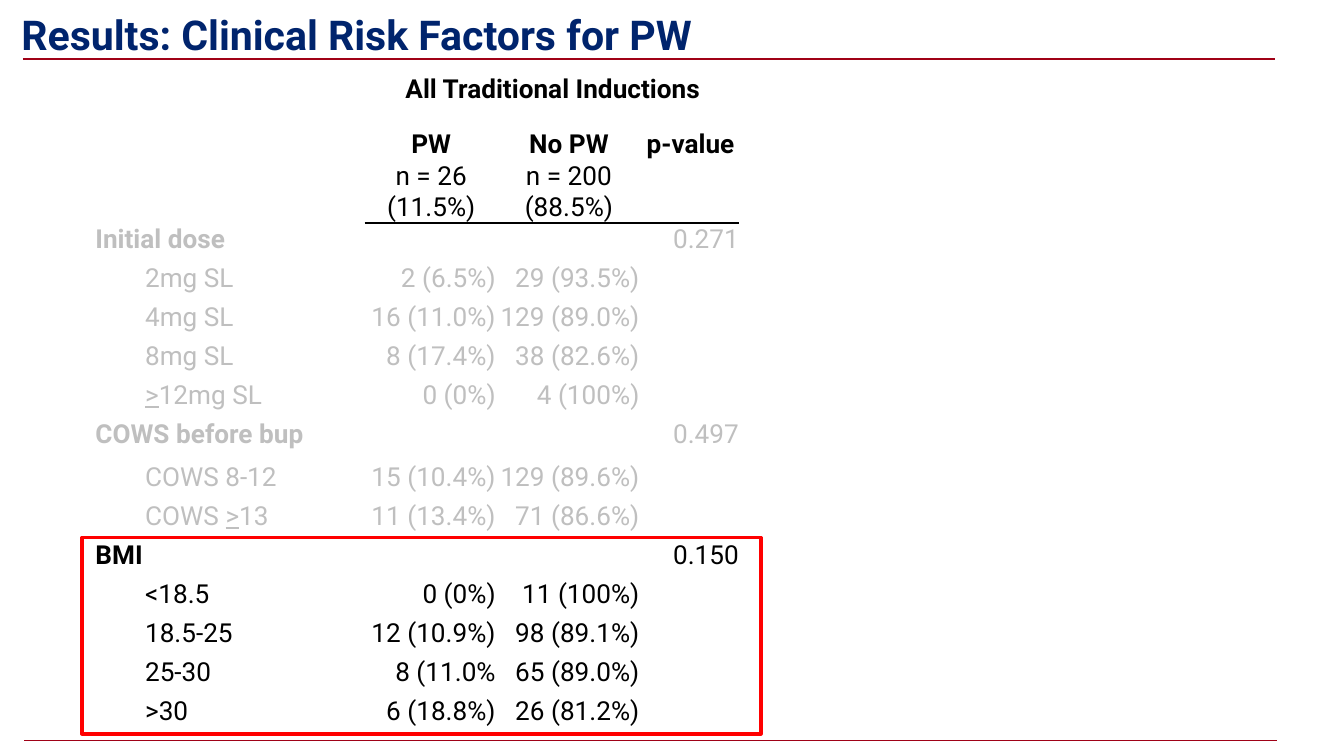
from lxml.etree import SubElement
from pptx import Presentation
from pptx.dml.color import RGBColor
from pptx.enum.shapes import MSO_CONNECTOR, MSO_SHAPE
from pptx.enum.text import MSO_ANCHOR, MSO_AUTO_SIZE, PP_ALIGN
from pptx.oxml.ns import qn
from pptx.util import Inches, Pt

FONT = "Roboto"
BLACK, WHITE, GREY = "000000", "FFFFFF", "BFBFBF"
NAVY, CRIMSON, RED = "00246D", "A00117", "FF0000"

COLUMN_WIDTHS = [0.37, 1.59, 0.05, 0.98, 1.07, 0.74, 0.08, 0.94, 1.07, 0.86]
ROW_HEIGHTS = [0.4, 0.29, 0.47] + [0.29] * 5 + [0.32] + [0.29] * 7
HEADER_ROWS = 3
RULED_COLUMNS = range(3, 6)

FACTORS = [
    ("Initial dose", "0.271", GREY, [
        ("2mg SL", "2 (6.5%)", "29 (93.5%)"),
        ("4mg SL", "16 (11.0%)", "129 (89.0%)"),
        ("8mg SL", "8 (17.4%)", "38 (82.6%)"),
        ("_>_12mg SL", "0 (0%)", "4 (100%)"),
    ]),
    ("COWS before bup", "0.497", GREY, [
        ("COWS 8-12", "15 (10.4%)", "129 (89.6%)"),
        ("COWS _>_13", "11 (13.4%)", "71 (86.6%)"),
    ]),
    ("BMI", "0.150", BLACK, [
        ("<18.5", "0 (0%)", "11 (100%)"),
        ("18.5-25", "12 (10.9%)", "98 (89.1%)"),
        ("25-30", "8 (11.0%", "65 (89.0%)"),
        (">30", "6 (18.8%)", "26 (81.2%)"),
    ]),
]


def rgb(value):
    return RGBColor.from_string(value)


def apply_format(target, values):
    for name, value in values.items():
        setattr(target, name, value)


def format_font(font, size, color, bold=False, underline=False):
    apply_format(font, {"name": FONT, "size": Pt(size), "bold": bold, "underline": underline})
    font.color.rgb = rgb(color)


def add_title(slide, text):
    title = slide.shapes.title
    apply_format(title, {"left": Inches(0.06), "top": Inches(0.09),
                         "width": Inches(7.4), "height": Inches(0.33)})
    frame = title.text_frame
    margin = Inches(0.1)
    apply_format(frame, {"text": text, "word_wrap": True, "auto_size": MSO_AUTO_SIZE.NONE,
                         "vertical_anchor": MSO_ANCHOR.MIDDLE,
                         "margin_left": margin, "margin_right": margin,
                         "margin_top": margin, "margin_bottom": margin})
    heading = frame.paragraphs[0]
    heading.alignment = PP_ALIGN.LEFT
    format_font(heading.runs[0].font, 22, NAVY, bold=True)


def add_rule(slide, left, top, width):
    rule = slide.shapes.add_connector(MSO_CONNECTOR.STRAIGHT, Inches(left), Inches(top),
                                      Inches(left + width), Inches(top))
    rule.line.color.rgb = rgb(CRIMSON)
    rule.line.width = Pt(1)
    SubElement(rule._element.spPr, qn("a:effectLst"))


def add_highlight(slide, left, top, width, height):
    highlight = slide.shapes.add_shape(MSO_SHAPE.RECTANGLE, Inches(left), Inches(top),
                                       Inches(width), Inches(height))
    highlight.shadow.inherit = False
    highlight.fill.background()
    highlight.line.color.rgb = rgb(RED)
    highlight.line.width = Pt(2)


def draw_border(cell, side, color):
    properties = cell._tc.get_or_add_tcPr()
    border = SubElement(properties, qn(f"a:ln{side}"), w=str(Pt(1)))
    fill = SubElement(border, qn("a:solidFill"))
    SubElement(fill, qn("a:srgbClr"), val=color)


def prepare_cell(cell, row, column):
    ruled = column in RULED_COLUMNS
    dark_side = {HEADER_ROWS - 1: "B", HEADER_ROWS: "T"}.get(row) if ruled else None
    for side in "LRTB":
        draw_border(cell, side, BLACK if side == dark_side else WHITE)
    cell.fill.solid()
    cell.fill.fore_color.rgb = rgb(WHITE)
    edge = Inches(0.01)
    apply_format(cell, {"margin_left": edge, "margin_right": edge})
    if row > 0:
        apply_format(cell, {"margin_top": edge, "margin_bottom": 0})
    SubElement(cell.text_frame.paragraphs[0]._p, qn("a:endParaRPr"), sz="1400")


def write_cell(cell, text, color=BLACK, align=PP_ALIGN.LEFT, bold=False):
    paragraph = cell.text_frame.paragraphs[0]
    paragraph.alignment = align
    for index, part in enumerate(text.split("_")):
        if part:
            run = paragraph.add_run()
            run.text = part
            format_font(run.font, 14, color, bold, underline=index % 2 == 1)


def merge_columns(table, row, first, last):
    table.cell(row, first).merge(table.cell(row, last))


def write_header(table):
    for row in range(HEADER_ROWS):
        merge_columns(table, row, 0, 1)
    merge_columns(table, 0, 3, 5)
    merge_columns(table, 0, 7, 9)
    write_cell(table.cell(0, 3), "All Traditional Inductions", align=PP_ALIGN.CENTER, bold=True)
    for column, label in zip(RULED_COLUMNS, ["PW", "No PW", "p-value"]):
        heading = table.cell(1, column)
        heading.vertical_anchor = MSO_ANCHOR.BOTTOM
        write_cell(heading, label, align=PP_ALIGN.CENTER, bold=True)
    for column, count in zip(RULED_COLUMNS, ["n = 26 (11.5%)", "n = 200 (88.5%)"]):
        write_cell(table.cell(2, column), count, align=PP_ALIGN.CENTER)


def write_factors(table):
    row = HEADER_ROWS
    for factor, p_value, color, levels in FACTORS:
        merge_columns(table, row, 0, 2)
        write_cell(table.cell(row, 0), factor, color, bold=True)
        write_cell(table.cell(row, 5), p_value, color, PP_ALIGN.RIGHT)
        for row, (level, with_pw, without_pw) in enumerate(levels, row + 1):
            merge_columns(table, row, 1, 2)
            write_cell(table.cell(row, 1), level, color)
            write_cell(table.cell(row, 3), with_pw, color, PP_ALIGN.RIGHT)
            write_cell(table.cell(row, 4), without_pw, color, PP_ALIGN.RIGHT)
        row += 1


def add_risk_table(slide):
    table = slide.shapes.add_table(len(ROW_HEIGHTS), len(COLUMN_WIDTHS), Inches(0.7), Inches(0.5),
                                   Inches(sum(COLUMN_WIDTHS)), Inches(sum(ROW_HEIGHTS))).table
    apply_format(table, {"first_row": False, "horz_banding": False})
    for column, width in zip(table.columns, COLUMN_WIDTHS):
        column.width = Inches(width)
    for row, height in zip(table.rows, ROW_HEIGHTS):
        row.height = Inches(height)
    for row in range(len(ROW_HEIGHTS)):
        for column in range(len(COLUMN_WIDTHS)):
            prepare_cell(table.cell(row, column), row, column)
    write_header(table)
    write_factors(table)


def main():
    presentation = Presentation()
    presentation.slide_width = Inches(10)
    presentation.slide_height = presentation.slide_width * 9 // 16
    slide = presentation.slides.add_slide(presentation.slide_layouts[5])
    add_title(slide, "Results: Clinical Risk Factors for PW")
    add_risk_table(slide)
    add_rule(slide, 0.17, 0.44, 9.32)
    add_rule(slide, 0.18, 5.51, 9.32)
    add_highlight(slide, 0.61, 4, 5.05, 1.46)
    presentation.save("out.pptx")


if __name__ == "__main__":
    main()
